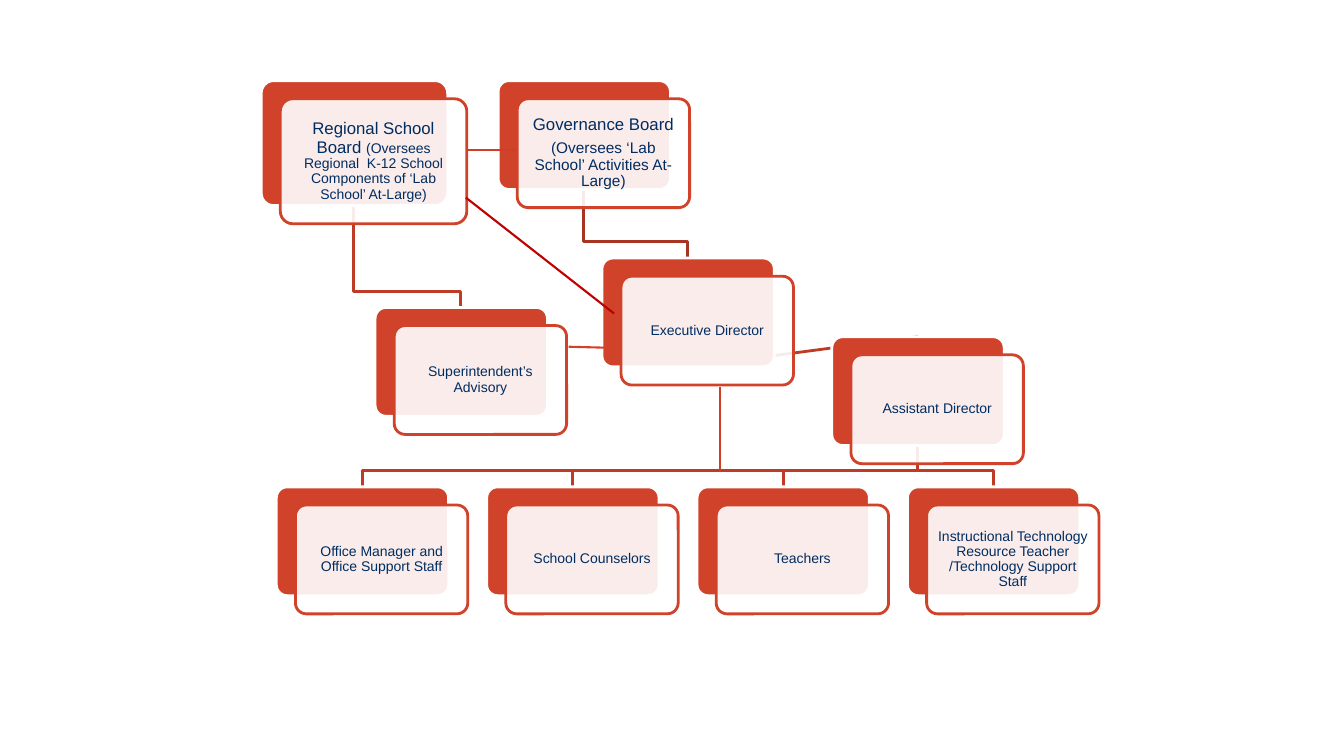
from lxml import etree
from pptx import Presentation
from pptx.dml.color import RGBColor
from pptx.enum.shapes import MSO_CONNECTOR, MSO_SHAPE
from pptx.enum.text import MSO_ANCHOR, PP_ALIGN
from pptx.oxml.ns import qn
from pptx.util import Inches, Pt

ROUND = MSO_SHAPE.ROUNDED_RECTANGLE
STRAIGHT = MSO_CONNECTOR.STRAIGHT
MIDDLE = MSO_ANCHOR.MIDDLE
CENTER = PP_ALIGN.CENTER
TOP, BOTTOM = 0, 2

WHITE = RGBColor(0xFF, 0xFF, 0xFF)
ORANGE = RGBColor(0xD1, 0x42, 0x2A)
BRICK = RGBColor(0xBE, 0x3C, 0x26)
RUST = RGBColor(0xA7, 0x35, 0x22)
FLAME = RGBColor(0xD0, 0x3E, 0x25)
RED = RGBColor(0xC0, 0x00, 0x00)
NAVY = RGBColor(0x00, 0x2D, 0x61)

WIDTH, HEIGHT = 1.71, 1.08
SHIFT_X, SHIFT_Y = 0.19, 0.18
DROP = 0.16  # last stretch of an elbow
ROW_X, ROW_Y = 2.74, 4.83
STEP = (9 - ROW_X) / 3
PARA = {"alignment": CENTER, "line_spacing": 0.9, "space_after": Pt(4)}

# left, top, width, height, inset, paragraphs of (text, size) runs
BOARDS = {
    "governance": (4.94, 0.8, WIDTH, HEIGHT, 0.05, [
        [("Governance Board", 12)],
        [("(Oversees ‘Lab School’ Activities At-Large)", 11)]]),
    "regional": (2.59, 0.8, 1.85, 1.24, 0.05, [
        [("Regional School Board ", 12),
         ("(Oversees Regional  K-12 School Components of ‘Lab School’ "
          "At-Large)", 10)]]),
}
LEADERS = {
    "advisory": (3.72, 3.05, "Superintendent’s Advisory"),
    "executive": (5.97, 2.56, "Executive Director"),
    "assistant": (8.25, 3.34, "Assistant Director"),
}
STAFF = [
    "Office Manager and Office Support Staff",
    "School Counselors",
    "Teachers",
    "Instructional Technology Resource Teacher /Technology Support Staff",
]
# start x, y, end x, y, color
LINKS = [
    (4.62, 1.96, 6.09, 3.11, RED),
    (7.14, 3.84, 7.14, 4.68, FLAME),
    (5.64, 3.44, 6.03, 3.45, ORANGE),
    (4.62, 1.49, 5.12, 1.49, FLAME),
]


def apply(target, values):
    for name, value in values.items():
        setattr(target, name, value)


def set_line(shape, color, width=2):
    shape.line.color.rgb = color
    shape.line.width = Pt(width)


def add_elbow(slide, x1, y1, x2, y2, color=BRICK):
    """Draw down, across and down again from one card to another."""
    bend = y2 - DROP
    points = [(Inches(x), Inches(y))
              for x, y in ((x1, bend), (x2, bend), (x2, y2))]
    pen = slide.shapes.build_freeform(Inches(x1), Inches(y1))
    pen.add_line_segments(points, close=False)
    elbow = pen.convert_to_shape()
    elbow.fill.background()
    elbow.shadow.inherit = False
    set_line(elbow, color)


def add_link(slide, x1, y1, x2, y2, color, width=1.5):
    link = slide.shapes.add_connector(
        STRAIGHT, Inches(x1), Inches(y1), Inches(x2), Inches(y2))
    set_line(link, color, width)
    etree.SubElement(link.element.spPr, qn("a:effectLst"))
    return link


def add_panel(slide, x, y, width, height, fill, line):
    panel = slide.shapes.add_shape(
        ROUND, Inches(x), Inches(y), Inches(width), Inches(height))
    panel.adjustments[0] = 0.1
    panel.shadow.inherit = False
    panel.fill.solid()
    panel.fill.fore_color.rgb = fill
    set_line(panel, line)
    return panel


def add_text(panel, paras, inset):
    frame = panel.text_frame
    gap = Inches(inset)
    apply(frame, {"word_wrap": True, "vertical_anchor": MIDDLE,
                  "margin_left": gap, "margin_right": gap,
                  "margin_top": gap, "margin_bottom": gap})
    for i, runs in enumerate(paras):
        para = frame.add_paragraph() if i else frame.paragraphs[0]
        apply(para, PARA)
        for text, size in runs:
            run = para.add_run()
            run.text = text
            apply(run.font, {"name": "Arial", "size": Pt(size)})
            run.font.color.rgb = NAVY


def add_card(slide, x, y, width, height, inset, paras):
    """Add a solid back panel and a sheer front one with the text."""
    back = add_panel(slide, x, y, width, height, ORANGE, WHITE)
    front = add_panel(slide, x + SHIFT_X, y + SHIFT_Y, width, height,
                      WHITE, ORANGE)
    fill = front.element.spPr.find(qn("a:solidFill"))
    etree.SubElement(fill.find(qn("a:srgbClr")), qn("a:alpha"), val="90000")
    add_text(front, paras, inset)
    return back


def main():
    deck = Presentation()
    deck.slide_width, deck.slide_height = Inches(13.33), Inches(7.5)
    slide = deck.slides.add_slide(deck.slide_layouts[6])

    for i in reversed(range(len(STAFF))):
        add_elbow(slide, 9.1, 4.43, ROW_X + i * STEP + WIDTH / 2, ROW_Y)
    bridge = add_link(slide, 6.82, 3.64, 9.1, 3.34, BRICK, 2)
    add_elbow(slide, 5.79, 1.89, 6.82, 2.56, RUST)
    add_elbow(slide, 3.51, 2.04, 4.57, 3.05)

    for card in BOARDS.values():
        add_card(slide, *card)
    backs = {}
    for name, (x, y, text) in LEADERS.items():
        backs[name] = add_card(slide, x, y, WIDTH, HEIGHT, 0.04,
                               [[(text, 10)]])
    for i, text in enumerate(STAFF):
        add_card(slide, ROW_X + i * STEP, ROW_Y, WIDTH, HEIGHT, 0.04,
                 [[(text, 10)]])

    bridge.begin_connect(backs["executive"], BOTTOM)
    bridge.end_connect(backs["assistant"], TOP)
    for link in LINKS:
        add_link(slide, *link)
    deck.save("out.pptx")


if __name__ == "__main__":
    main()
